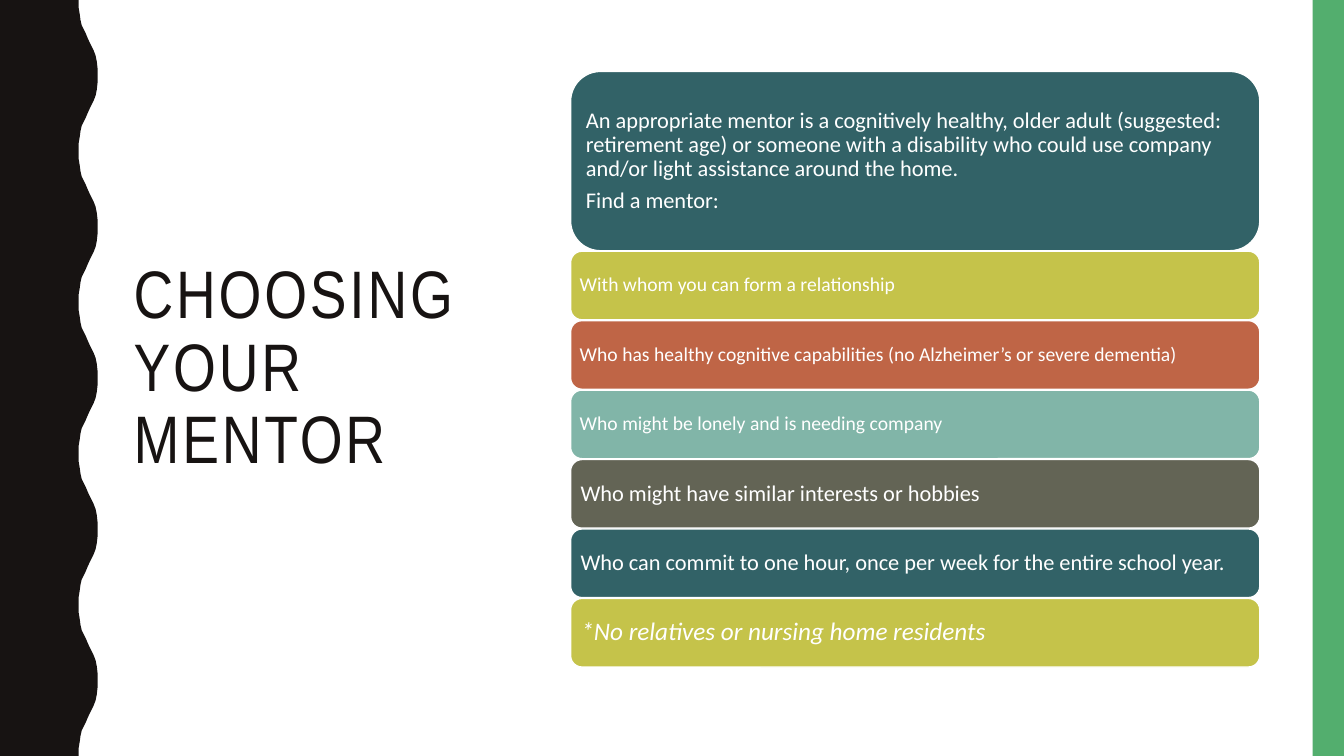
from dataclasses import dataclass

from pptx import Presentation
from pptx.dml.color import RGBColor
from pptx.enum.shapes import MSO_SHAPE
from pptx.enum.text import MSO_ANCHOR, PP_ALIGN
from pptx.util import Cm, Pt


@dataclass(frozen=True)
class Theme:
    ink: str = "171312"
    white: str = "FFFFFF"
    green: str = "53AE6E"
    teal: str = "326267"
    olive: str = "C5C34A"
    rust: str = "BF6546"
    sage: str = "81B5A8"
    stone: str = "636455"
    title_font: str = "Arial Narrow"
    body_font: str = "Calibri"
    title_size: int = 48
    small: int = 14
    medium: int = 16
    large: int = 18


def write_text(tf, *texts, font, size, color, italic=False, spacing=0, after=0, inset=0.25):
    """Fill a text frame with one left-aligned paragraph per text."""
    tf.word_wrap = True
    tf.vertical_anchor = MSO_ANCHOR.MIDDLE
    tf.margin_left = tf.margin_right = Cm(inset)
    tf.margin_top = tf.margin_bottom = Cm(inset)
    for i, text in enumerate(texts):
        p = tf.add_paragraph() if i else tf.paragraphs[0]
        p.alignment = PP_ALIGN.LEFT
        p.line_spacing = 0.9
        p.space_after = Pt(after)
        r = p.add_run()
        r.text = text
        r.font.name = font
        r.font.size = Pt(size)
        r.font.italic = italic
        r.font.color.rgb = RGBColor.from_string(color)
        if spacing:
            r.font._element.set("spc", str(spacing * 100))


class SlideBuilder:
    def __init__(self, s, theme):
        self.s = s
        self.theme = theme

    def paint(self, sp, fill, line=None):
        sp.shadow.inherit = False
        sp.fill.solid()
        sp.fill.fore_color.rgb = RGBColor.from_string(fill)
        if line:
            sp.line.color.rgb = RGBColor.from_string(line)
            sp.line.width = Pt(1)
        else:
            sp.line.fill.background()
        return sp

    def shape(self, kind, x, y, w, h, fill, line=None):
        sp = self.s.shapes.add_shape(kind, Cm(x), Cm(y), Cm(w), Cm(h))
        return self.paint(sp, fill, line)

    def wavy_band(self, half_wave, period, count, fill):
        """Band on the left edge; points are in hundredths of a centimetre."""
        wave = half_wave + [(x, period - y) for x, y in half_wave[-2::-1]]
        points = [(x, y + n * period) for n in range(count) for x, y in wave]
        fb = self.s.shapes.build_freeform(0, 0, scale=Cm(0.01))
        fb.add_line_segments(points + [(0, count * period)], close=True)
        return self.paint(fb.convert_to_shape(), fill)

    def title(self, text, x, y, w, h):
        t = self.theme
        tb = self.s.shapes.add_textbox(Cm(x), Cm(y), Cm(w), Cm(h))
        write_text(tb.text_frame, text, font=t.title_font, size=t.title_size,
                   color=t.ink, spacing=2)

    def card(self, texts, x, y, w, h, fill, size, italic=False):
        t = self.theme
        sp = self.shape(MSO_SHAPE.ROUNDED_RECTANGLE, x, y, w, h, fill, t.white)
        write_text(sp.text_frame, *texts, font=t.body_font, size=size, color=t.white,
                   italic=italic, after=0.35 * size, inset=size * 0.0105)


def main():
    prs = Presentation()
    prs.slide_width, prs.slide_height = Cm(33.87), Cm(19.05)
    t = Theme()
    sb = SlideBuilder(prs.slides.add_slide(prs.slide_layouts[6]), t)

    # Side decoration
    half_wave = [(198, 0), (198, 18), (201, 36), (203, 51), (206, 64),
                 (211, 74), (216, 84), (221, 96), (226, 107), (231, 117),
                 (236, 127), (241, 140), (244, 155), (246, 173), (246, 190.5)]
    sb.wavy_band(half_wave, period=381, count=5, fill=t.ink)
    sb.shape(MSO_SHAPE.RECTANGLE, 33.08, 0, 0.79, 19.05, t.green)

    # Title
    sb.title("CHOOSING YOUR MENTOR", 3.12, 1.8, 10.74, 15.01)

    # Introduction card
    left, width = 14.38, 17.37
    intro = (
        "An appropriate mentor is a cognitively healthy, older adult (suggested: "
        "retirement age) or someone with a disability who could use "
        "company and/or light assistance around the home.",
        "Find a mentor:",
    )
    sb.card(intro, left, 1.8, width, 4.52, t.teal, t.medium)

    # Criteria cards, evenly stacked
    criteria = [
        ("With whom you can form a relationship", t.olive, t.small),
        ("Who has healthy cognitive capabilities (no Alzheimer’s or severe dementia)",
         t.rust, t.small),
        ("Who might be lonely and is needing company", t.sage, t.small),
        ("Who might have similar interests or hobbies", t.stone, t.medium),
        ("Who can commit to one hour, once per week for the entire school year.",
         t.teal, t.medium),
        ("*No relatives or nursing home residents", t.olive, t.large),
    ]
    top, pitch, height = 6.33, 1.75, 1.73
    for i, (text, fill, size) in enumerate(criteria):
        sb.card([text], left, top + i * pitch, width, height, fill, size,
                italic=text.startswith("*"))

    prs.save("out.pptx")


if __name__ == "__main__":
    main()
